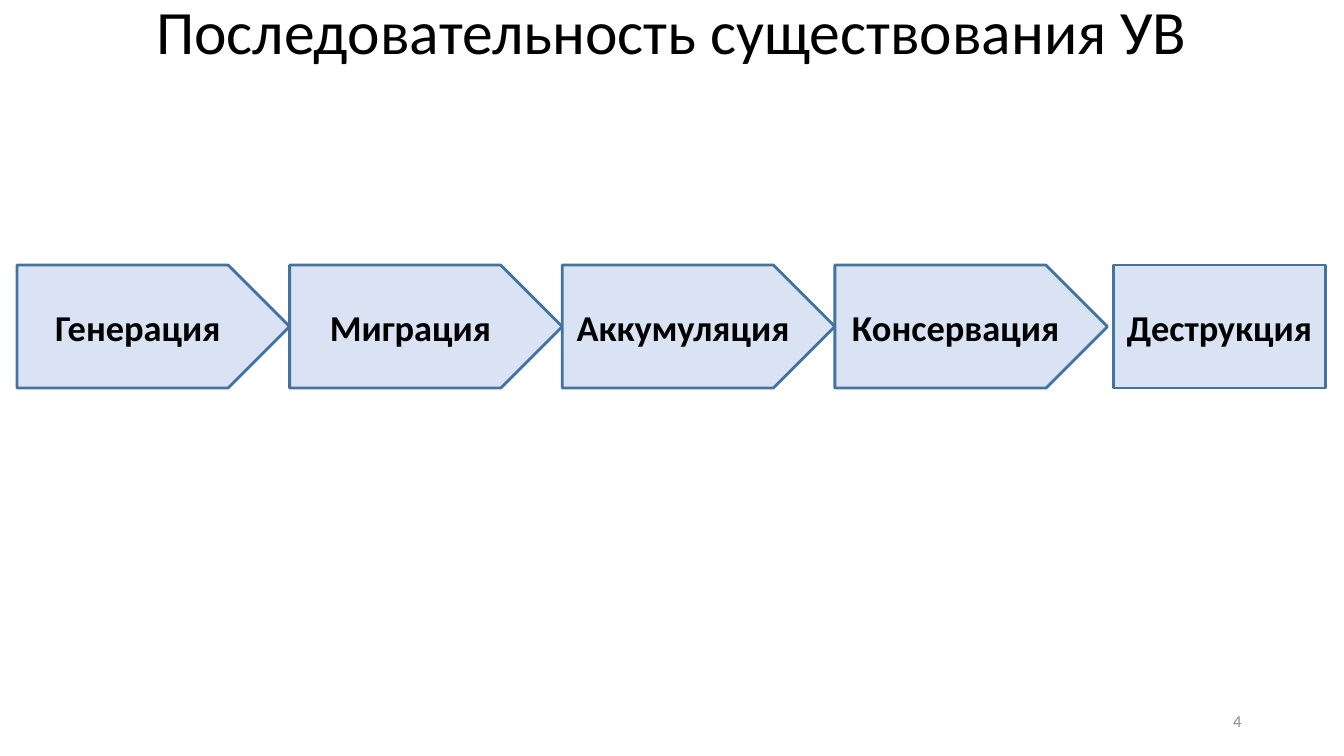
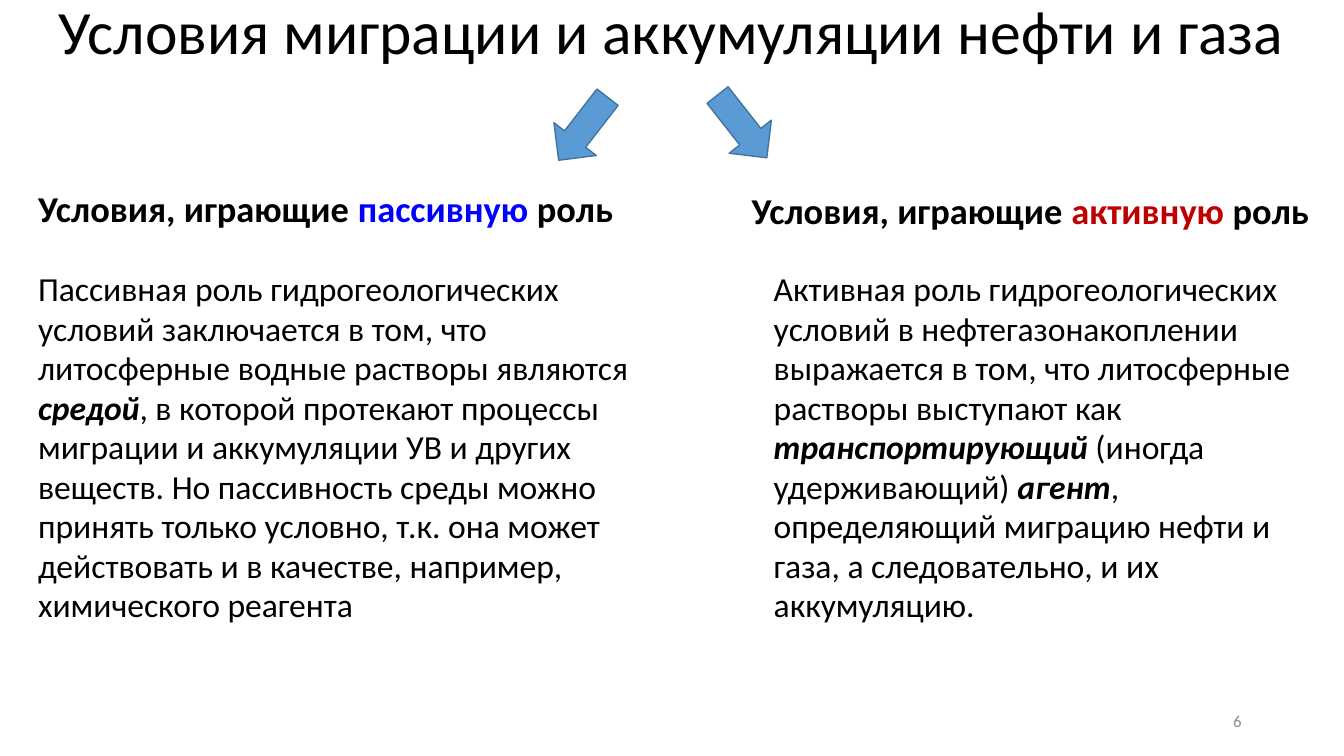
from dataclasses import dataclass

from pptx import Presentation
from pptx.dml.color import RGBColor
from pptx.enum.shapes import MSO_SHAPE
from pptx.enum.text import MSO_ANCHOR, MSO_AUTO_SIZE, PP_ALIGN
from pptx.util import Cm, Pt

PENTAGON = MSO_SHAPE.PENTAGON
PROCESS = MSO_SHAPE.FLOWCHART_PROCESS
DOWN_ARROW = MSO_SHAPE.DOWN_ARROW
TOP, MIDDLE = MSO_ANCHOR.TOP, MSO_ANCHOR.MIDDLE
LEFT, CENTER, RIGHT = PP_ALIGN.LEFT, PP_ALIGN.CENTER, PP_ALIGN.RIGHT
NO_AUTOFIT = MSO_AUTO_SIZE.NONE


@dataclass(frozen=True)
class Theme:
    font: str = "Calibri"
    text: RGBColor = RGBColor(0x00, 0x00, 0x00)
    muted: RGBColor = RGBColor(0x8C, 0x8C, 0x8C)
    stage: RGBColor = RGBColor(0xDA, 0xE3, 0xF3)
    arrow: RGBColor = RGBColor(0x5B, 0x9B, 0xD5)
    outline: RGBColor = RGBColor(0x43, 0x73, 0x9E)
    passive: RGBColor = RGBColor(0x00, 0x00, 0xFF)
    active: RGBColor = RGBColor(0xC0, 0x00, 0x00)
    title_size: Pt = Pt(44)
    heading_size: Pt = Pt(26)
    body_size: Pt = Pt(24)
    number_size: Pt = Pt(12)


THEME = Theme()


def write_text(shape, runs, size, color=THEME.text, bold=False, align=LEFT, anchor=TOP, wrap=True):
    frame = shape.text_frame
    frame.word_wrap = wrap
    frame.auto_size = NO_AUTOFIT
    frame.vertical_anchor = anchor
    paragraph = frame.paragraphs[0]
    paragraph.alignment = align
    paragraph.font.name = THEME.font
    paragraph.font.size = size
    paragraph.font.bold = bold
    paragraph.font.color.rgb = color
    for text, accent in runs:
        run = paragraph.add_run()
        run.text = text
        if accent == "emphasis":
            run.font.bold = True
            run.font.italic = True
        elif accent:
            run.font.color.rgb = accent
    return paragraph


def add_filled_shape(slide, kind, box, fill, line_width):
    shape = slide.shapes.add_shape(kind, *map(Cm, box))
    shape.shadow.inherit = False
    shape.fill.solid()
    shape.fill.fore_color.rgb = fill
    shape.line.color.rgb = THEME.outline
    shape.line.width = line_width
    return shape


presentation = Presentation()
presentation.slide_width = Cm(33.87)
presentation.slide_height = Cm(19.05)

slides = []
for title_text, number in [
    ("Последовательность существования УВ", "4"),
    ("Условия миграции и аккумуляции нефти и газа", "6"),
]:
    slide = presentation.slides.add_slide(presentation.slide_layouts[5])
    title = slide.shapes.title
    title.left, title.top, title.width, title.height = Cm(0), Cm(0.15), Cm(33.87), Cm(1.73)
    paragraph = write_text(title, [(title_text, None)], THEME.title_size, align=CENTER)
    paragraph.line_spacing = Pt(40)
    number_box = slide.shapes.add_textbox(Cm(23.92), Cm(17.66), Cm(7.62), Cm(1.01))
    write_text(number_box, [(number, None)], THEME.number_size, THEME.muted, align=RIGHT, anchor=MIDDLE)
    slides.append(slide)

sequence_slide, conditions_slide = slides

STAGE_LEFT, STAGE_TOP, STAGE_WIDTH, STAGE_HEIGHT = 0.43, 6.68, 6.87, 3.1
stages = [
    (PENTAGON, STAGE_LEFT + index * STAGE_WIDTH, STAGE_WIDTH, name)
    for index, name in enumerate(["Генерация", "Миграция", "Аккумуляция", "Консервация"])
]
stages.append((PROCESS, 28.07, 5.33, "Деструкция"))
for kind, left, width, name in stages:
    stage = add_filled_shape(
        sequence_slide, kind, (left, STAGE_TOP, width, STAGE_HEIGHT), THEME.stage, Pt(2)
    )
    write_text(stage, [(name, None)], THEME.heading_size, bold=True, align=CENTER, anchor=MIDDLE)

columns = [
    {
        "arrow": (14.02, 2.24, 1.35, 2.01),
        "rotation": 37.8,
        "heading_box": (0.71, 4.57, 15.14, 1.37),
        "heading": [("Условия, играющие ", None), ("пассивную ", THEME.passive), ("роль", None)],
        "body_box": (0.71, 6.68, 16.23, 9.86),
        "body": [
            (
                "Пассивная роль гидрогеологических условий заключается в том, что "
                "литосферные водные растворы являются ",
                None,
            ),
            ("средой", "emphasis"),
            (
                ", в которой протекают процессы миграции и аккумуляции УВ и других веществ. "
                "Но пассивность среды можно принять только условно, т.к. она может "
                "действовать и в качестве, например, химического реагента",
                None,
            ),
        ],
    },
    {
        "arrow": (18.03, 2.18, 1.35, 2.01),
        "rotation": 321.9,
        "heading_box": (18.69, 4.62, 14.68, 1.37),
        "heading": [("Условия, играющие ", None), ("активную", THEME.active), (" роль", None)],
        "body_box": (19.25, 6.68, 13.69, 9.5),
        "body": [
            (
                "Активная роль гидрогеологических условий в нефтегазонакоплении "
                "выражается в том, что литосферные растворы выступают как ",
                None,
            ),
            ("транспортирующий", "emphasis"),
            (" (иногда удерживающий) ", None),
            ("агент", "emphasis"),
            (", определяющий миграцию нефти и газа, а следовательно, и их аккумуляцию.", None),
        ],
    },
]
for column in columns:
    arrow = add_filled_shape(conditions_slide, DOWN_ARROW, column["arrow"], THEME.arrow, Pt(1))
    arrow.rotation = column["rotation"]
    heading = conditions_slide.shapes.add_textbox(*map(Cm, column["heading_box"]))
    write_text(heading, column["heading"], THEME.heading_size, bold=True, wrap=False)
    body = conditions_slide.shapes.add_textbox(*map(Cm, column["body_box"]))
    paragraph = write_text(body, column["body"], THEME.body_size)
    paragraph.space_before = Pt(10)
    paragraph.line_spacing = 0.98

presentation.save("out.pptx")
